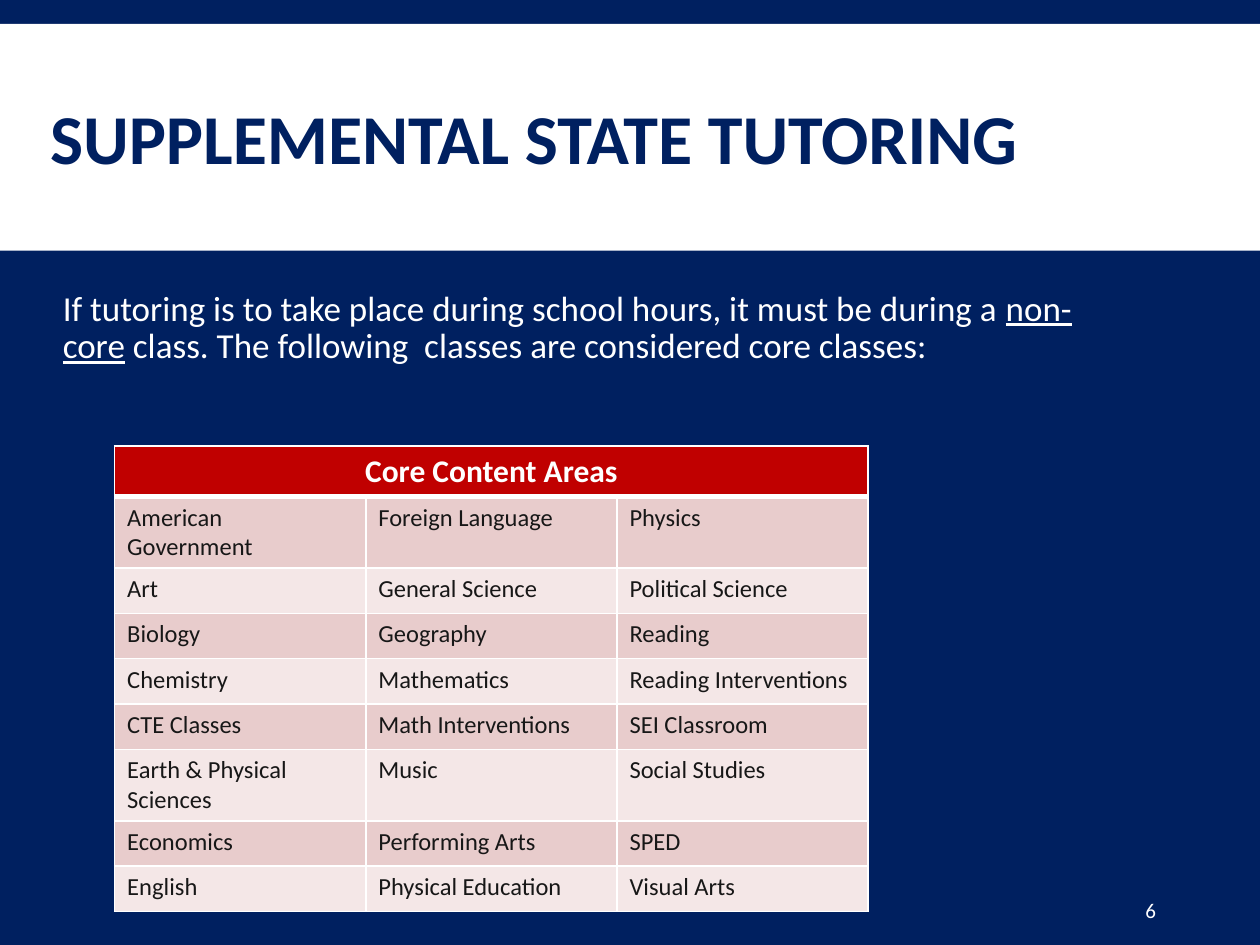
import dataclasses

import lxml.etree
import pptx
import pptx.dml.color
import pptx.enum.shapes
import pptx.enum.text
import pptx.oxml.ns
import pptx.util

ALIGN = pptx.enum.text.PP_ALIGN
ANCHOR = pptx.enum.text.MSO_ANCHOR


@dataclasses.dataclass(frozen=True)
class Theme:
    """Colours, font and type sizes of the slide."""

    navy: str = "002060"
    white: str = "FFFFFF"
    red: str = "C00000"
    ink: str = "171717"
    bands: tuple = ("E8CCCC", "F4E7E7")
    font: str = "Calibri"
    title: int = 40
    body: int = 20
    header: int = 18
    cell: int = 14
    number: int = 12


THEME = Theme()
CORE_CLASSES = [
    ("American Government", "Foreign Language", "Physics"),
    ("Art", "General Science", "Political Science"),
    ("Biology", "Geography", "Reading"),
    ("Chemistry", "Mathematics", "Reading Interventions"),
    ("CTE Classes", "Math Interventions", "SEI Classroom"),
    ("Earth & Physical Sciences", "Music", "Social Studies"),
    ("Economics", "Performing Arts", "SPED"),
    ("English", "Physical Education", "Visual Arts"),
]


def inches(*values):
    """Convert lengths in inches to slide units."""
    return [pptx.util.Inches(value) for value in values]


def paint(fill, colour):
    """Give a fill one solid colour."""
    fill.solid()
    fill.fore_color.rgb = pptx.dml.color.RGBColor.from_string(colour)


def apply(target, formats):
    """Set every attribute named in a dict of format values."""
    for name, value in formats.items():
        setattr(target, name, value)


def write(para, text, size, colour, **formats):
    """Add one formatted span to a paragraph."""
    span = para.add_run()
    span.text = text
    apply(span.font, {"name": THEME.font, "size": pptx.util.Pt(size), **formats})
    span.font.color.rgb = pptx.dml.color.RGBColor.from_string(colour)


def add_text(page, box, spans, size, colour, frame=None, para=None):
    """Place a wrapped text box holding one paragraph of (text, format) spans."""
    holder = page.shapes.add_textbox(*inches(*box)).text_frame
    apply(holder, {"word_wrap": True, **(frame or {})})
    line = holder.paragraphs[0]
    apply(line, para or {})
    for text, formats in spans:
        write(line, text, size, colour, **formats)
    return line


def add_title(page, box, text):
    """Place the white band and the title centred in its height."""
    left, top, width, height = box
    band = page.shapes.add_shape(pptx.enum.shapes.MSO_SHAPE.RECTANGLE, *inches(*box))
    band.shadow.inherit = False
    paint(band.fill, THEME.white)
    band.line.fill.background()
    title_box = (left + 0.03 * width, top + 0.12, 0.94 * width, height - 0.15)
    add_text(page, title_box, [(text, {"bold": True})], THEME.title, THEME.navy,
             {"vertical_anchor": ANCHOR.MIDDLE}, {"line_spacing": 0.85})


def add_intro(page, box, spans):
    """Place the indented introduction."""
    para = add_text(page, box, spans, THEME.body, THEME.white,
                    para={"line_spacing": 0.9, "space_after": pptx.util.Pt(2)})
    para._p.get_or_add_pPr().set("marL", str(pptx.util.Inches(0.12)))


def add_borders(cell, widths):
    """Draw white cell borders, given widths in points by side."""
    props = cell._tc.get_or_add_tcPr()
    for place, side in enumerate("LRTB"):
        line = lxml.etree.Element(pptx.oxml.ns.qn(f"a:ln{side}"),
                                  w=str(pptx.util.Pt(widths.get(side, 1))))
        fill = lxml.etree.SubElement(line, pptx.oxml.ns.qn("a:solidFill"))
        lxml.etree.SubElement(fill, pptx.oxml.ns.qn("a:srgbClr"), val=THEME.white)
        props.insert(place, line)


def add_class_table(page, box, heading, rows):
    """Place a banded table under one merged heading row."""
    columns = len(rows[0])
    table = page.shapes.add_table(len(rows) + 1, columns, *inches(*box)).table
    for row in table.rows:
        row.height = pptx.util.Inches(0.36)
    table.cell(0, 0).merge(table.cell(0, columns - 1))
    write(table.cell(0, 0).text_frame.paragraphs[0], heading, THEME.header,
          THEME.white, bold=True)
    table.cell(0, 0).text_frame.paragraphs[0].alignment = ALIGN.CENTER
    for column in range(columns):
        paint(table.cell(0, column).fill, THEME.red)
        add_borders(table.cell(0, column), {"B": 3})
    for number, row in enumerate(rows, 1):
        for column, text in enumerate(row):
            cell = table.cell(number, column)
            write(cell.text_frame.paragraphs[0], text, THEME.cell, THEME.ink, bold=False)
            paint(cell.fill, THEME.bands[(number - 1) % 2])
            add_borders(cell, {"T": 3} if number == 1 else {})


def add_page_number(page, box, number):
    """Place the page number."""
    add_text(page, box, [(number, {})], THEME.number, THEME.white,
             {"vertical_anchor": ANCHOR.MIDDLE, "margin_left": pptx.util.Inches(0.05)})


def main():
    """Build the deck and save it."""
    deck = pptx.Presentation()
    deck.slide_width, deck.slide_height = inches(10, 7.5)
    page = deck.slides.add_slide(deck.slide_layouts[6])
    paint(page.background.fill, THEME.navy)
    add_title(page, (0, 0.19, 10, 1.8), "SUPPLEMENTAL STATE TUTORING")
    add_intro(page, (0.28, 2.26, 8.76, 1), [
        ("If tutoring is to take place during school hours, it must be during a ", {}),
        ("non-core", {"underline": True}),
        (" class. The following  classes are considered core classes:", {}),
    ])
    add_page_number(page, (9.04, 7.02, 0.78, 0.4), "6")
    add_class_table(page, (0.91, 3.54, 5.98, 3.69), "Core Content Areas", CORE_CLASSES)
    deck.save("out.pptx")


if __name__ == "__main__":
    main()
